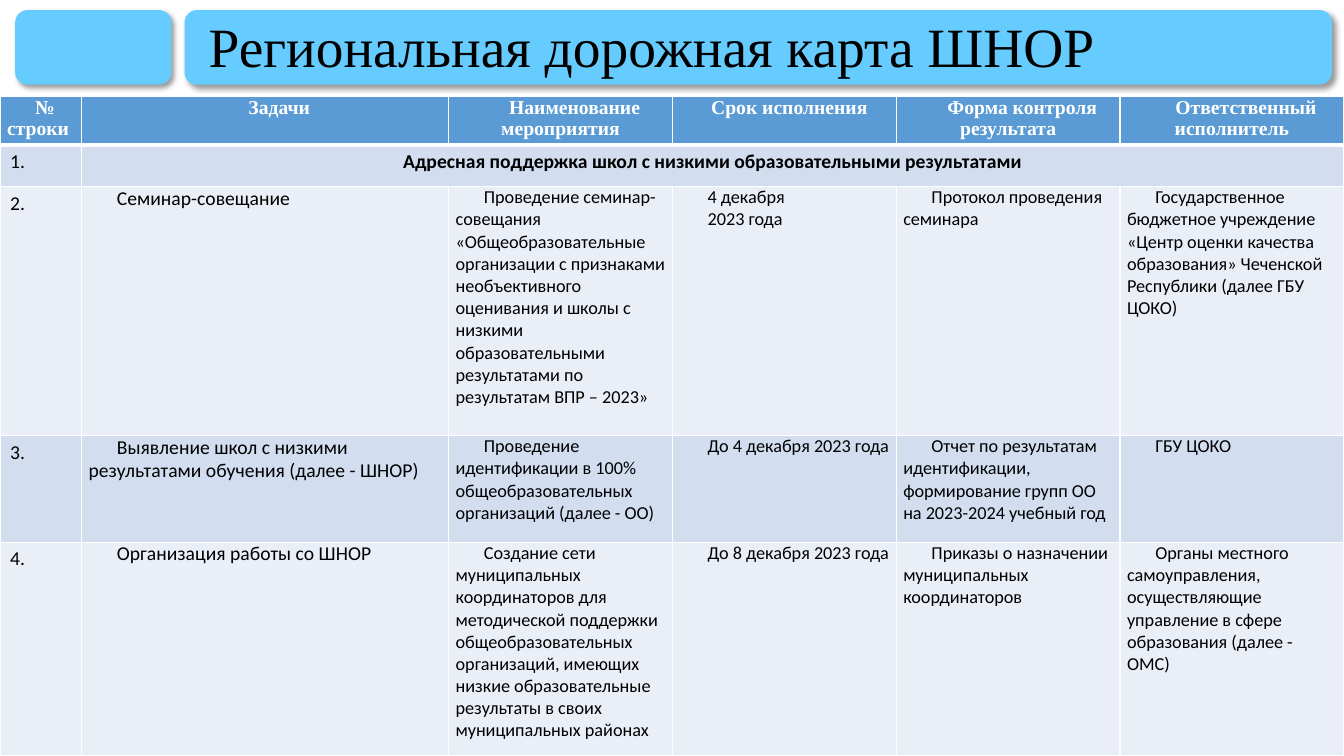
from lxml.etree import SubElement
from pptx import Presentation
from pptx.dml.color import RGBColor
from pptx.enum.shapes import MSO_SHAPE
from pptx.enum.text import MSO_ANCHOR, MSO_AUTO_SIZE, PP_ALIGN
from pptx.oxml import parse_xml
from pptx.oxml.ns import nsdecls, qn
from pptx.util import Inches, Pt

WIDTH, HEIGHT = 13.33, 7.5
SKY, HEADER, BAND, LIGHT = "66CCFF", "5B9BD5", "D2DEEF", "EAEFF7"
BLACK, WHITE = "000000", "FFFFFF"
INDENT = 0.28
COLUMNS = [0.81, 3.64] + [2.22] * 4
ROWS = [0.48, 0.41, 2.47, 1.06, 2.12]

HEADINGS = ["№ строки", "Задачи", "Наименование мероприятия", "Срок исполнения",
            "Форма контроля результата", "Ответственный исполнитель"]
SECTION = ["1.", "Адресная поддержка школ с низкими образовательными результатами"]
TASKS = [
    ["2.", "Семинар-совещание",
     "Проведение семинар-совещания «Общеобразовательные организации с признаками "
     "необъективного оценивания и школы с низкими образовательными результатами "
     "по результатам ВПР – 2023»",
     "4 декабря\n2023 года", "Протокол проведения семинара",
     "Государственное бюджетное учреждение «Центр оценки качества образования» "
     "Чеченской Республики (далее ГБУ ЦОКО)"],
    ["3.", "Выявление школ с низкими результатами обучения (далее - ШНОР)",
     "Проведение идентификации в 100% общеобразовательных организаций (далее - ОО)",
     "До 4 декабря 2023 года",
     "Отчет по результатам идентификации, формирование групп ОО на 2023-2024 учебный год",
     "ГБУ ЦОКО"],
    ["4.", "Организация работы со ШНОР",
     "Создание сети муниципальных координаторов для методической поддержки "
     "общеобразовательных организаций, имеющих низкие образовательные результаты "
     "в своих муниципальных районах",
     "До 8 декабря 2023 года", "Приказы о назначении муниципальных координаторов",
     "Органы местного самоуправления, осуществляющие управление в сфере образования "
     "(далее - ОМС)"],
]


def color(value):
    return RGBColor.from_string(value)


def apply(target, formats):
    for name, value in formats.items():
        setattr(target, name, value)


def place(part, left, top, width, height):
    apply(part, dict(left=Inches(left), top=Inches(top),
                     width=Inches(width), height=Inches(height)))


def style(paragraph, size, face="Calibri", tint=BLACK, bold=False,
          align=PP_ALIGN.LEFT, indent=0):
    paragraph.alignment = align
    if indent:
        properties = paragraph._p.get_or_add_pPr()
        properties.set("marL", "0")
        properties.set("indent", str(Inches(indent)))
    apply(paragraph.font, dict(name=face, size=Pt(size), bold=bold))
    paragraph.font.color.rgb = color(tint)


def add_panel(slide, title, left, top, width, height):
    panel = slide.shapes.add_shape(MSO_SHAPE.ROUNDED_RECTANGLE, Inches(left),
                                   Inches(top), Inches(width), Inches(height))
    panel.fill.solid()
    panel.fill.fore_color.rgb = color(SKY)
    panel.line.fill.background()
    panel.shadow.inherit = False
    effects = panel._element.spPr.find(qn("a:effectLst"))
    effects.append(parse_xml(
        f'<a:outerShdw {nsdecls("a")} blurRad="{Pt(4)}" dist="{Pt(3)}" dir="2700000" '
        f'algn="tl" rotWithShape="0"><a:srgbClr val="{BLACK}">'
        '<a:alpha val="40000"/></a:srgbClr></a:outerShdw>'))
    title._element.addprevious(panel._element)


def add_banner(slide, left, top, width, height):
    title = slide.shapes.title
    badge, heading = 1.55, 11.38
    add_panel(slide, title, left, top, badge, height)
    add_panel(slide, title, left + width - heading, top, heading, height)
    place(title, left + width - heading + 0.14, top + 0.06, heading - 0.28, height - 0.08)
    frame = title.text_frame
    frame.text = "Региональная дорожная карта ШНОР"
    apply(frame, dict(word_wrap=True, auto_size=MSO_AUTO_SIZE.NONE,
                      vertical_anchor=MSO_ANCHOR.MIDDLE))
    style(frame.paragraphs[0], 39.6, "Times New Roman")
    frame.paragraphs[0].line_spacing = 0.9


def add_borders(cell, top, bottom):
    properties = cell._tc.get_or_add_tcPr()
    for side, points in dict(lnL=1, lnR=1, lnT=top, lnB=bottom).items():
        border = SubElement(properties, qn(f"a:{side}"), w=str(Pt(points)))
        fill = SubElement(border, qn("a:solidFill"))
        SubElement(fill, qn("a:srgbClr"), val=WHITE)


def fill_cell(cell, text, compact, **formats):
    cell.text = text
    if compact:
        apply(cell, dict(margin_left=Inches(0.07), margin_right=Inches(0.07),
                         margin_top=0, margin_bottom=0))
    for paragraph in cell.text_frame.paragraphs:
        style(paragraph, **formats)


def add_roadmap(slide, left, top, width, height):
    roadmap = slide.shapes.add_table(len(ROWS), len(COLUMNS), Inches(left), Inches(top),
                                     Inches(width), Inches(height)).table
    for column, share in zip(roadmap.columns, COLUMNS):
        column.width = Inches(width * share / sum(COLUMNS))
    for row, share in zip(roadmap.rows, ROWS):
        row.height = Inches(height * share / sum(ROWS))
    for number, row in enumerate(roadmap.rows):
        for cell in row.cells:
            add_borders(cell, 3 if number == 1 else 1, 3 if number == 0 else 1)
            cell.fill.solid()
            cell.fill.fore_color.rgb = color([HEADER, BAND, LIGHT, BAND, LIGHT][number])

    for column, heading in enumerate(HEADINGS):
        fill_cell(roadmap.cell(0, column), heading, True, size=14,
                  face="Times New Roman", tint=WHITE, bold=True,
                  align=PP_ALIGN.CENTER if column else PP_ALIGN.LEFT,
                  indent=0.1 if column == 3 else INDENT)
    roadmap.cell(1, 1).merge(roadmap.cell(1, len(COLUMNS) - 1))
    fill_cell(roadmap.cell(1, 0), SECTION[0], False, size=14)
    fill_cell(roadmap.cell(1, 1), SECTION[1], False, size=14, bold=True,
              align=PP_ALIGN.CENTER)
    for number, task in enumerate(TASKS, 2):
        for column, text in enumerate(task):
            fill_cell(roadmap.cell(number, column), text, column > 0,
                      size=14 if column < 2 else 13, indent=INDENT if column else 0)


def main():
    deck = Presentation()
    apply(deck, dict(slide_width=Inches(WIDTH), slide_height=Inches(HEIGHT)))
    slide = deck.slides.add_slide(deck.slide_layouts[5])
    add_banner(slide, 0.15, 0.1, 13.06, 0.74)
    add_roadmap(slide, 0, 0.96, WIDTH, HEIGHT - 0.96)
    deck.save("out.pptx")


if __name__ == "__main__":
    main()
